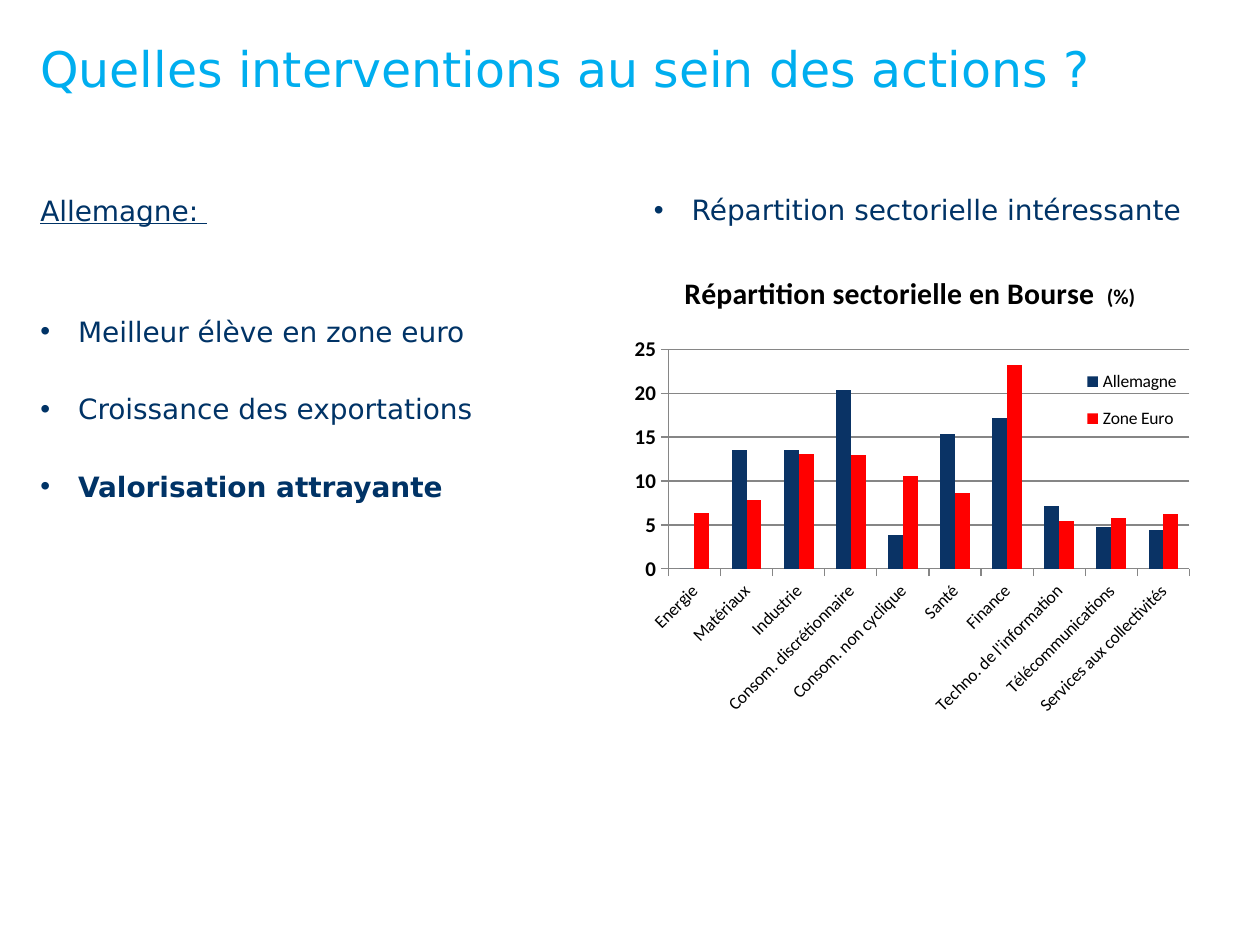
from dataclasses import dataclass

from lxml import etree
from pptx import Presentation
from pptx.chart.data import CategoryChartData
from pptx.dml.color import RGBColor
from pptx.enum.chart import XL_CHART_TYPE, XL_LEGEND_POSITION, XL_TICK_MARK
from pptx.oxml.ns import qn
from pptx.util import Inches, Pt

COLUMNS = XL_CHART_TYPE.COLUMN_CLUSTERED
LEGEND_RIGHT = XL_LEGEND_POSITION.RIGHT
TICK_OUTSIDE = XL_TICK_MARK.OUTSIDE

NAVY = RGBColor(0x00, 0x33, 0x66)
CYAN = RGBColor(0x00, 0xAE, 0xEF)
BLACK = RGBColor(0x00, 0x00, 0x00)
GRAY = RGBColor(0x86, 0x86, 0x86)
GERMANY_BLUE = RGBColor(0x0A, 0x33, 0x65)
EURO_RED = RGBColor(0xFF, 0x00, 0x00)

TEXT_FONT = "DejaVu Sans"
CHART_FONT = "Calibri"
BULLET_INDENT = Inches(0.3)


@dataclass
class Line:
    text: str
    size: float = 16
    color: RGBColor = NAVY
    spacing: float = 0.9
    before: float = 3
    after: float = 3
    bullet: bool = False
    bold: bool = False
    underline: bool = False


@dataclass
class TextBlock:
    left: float
    top: float
    width: float
    height: float
    lines: list[Line]


@dataclass
class Series:
    name: str
    values: list[float]
    color: RGBColor


TEXT_BLOCKS = [
    TextBlock(0.32, 0.38, 9.37, 1.01, [
        Line("Quelles interventions au sein des actions ?", 28, CYAN, 0.85, 0, 0),
    ]),
    TextBlock(0.32, 1.57, 4.56, 4.78, [
        Line("Allemagne: ", before=0, after=27, underline=True),
        Line("Meilleur élève en zone euro", spacing=2, bullet=True),
        Line("Croissance des exportations", spacing=2, bullet=True),
        Line("Valorisation attrayante", spacing=2, bullet=True, bold=True),
    ]),
    TextBlock(5.19, 1.56, 4.5, 0.4, [
        Line("Répartition sectorielle intéressante", before=0, bullet=True),
    ]),
]

SECTORS = [
    "Energie", "Matériaux", "Industrie", "Consom. discrétionnaire",
    "Consom. non cyclique", "Santé", "Finance", "Techno. de l'information",
    "Télécommunications", "Services aux collectivités",
]
SERIES = [
    Series("Allemagne", [0, 13.5, 13.5, 20.4, 3.9, 15.3, 17.2, 7.1, 4.7, 4.4],
           GERMANY_BLUE),
    Series("Zone Euro", [6.3, 7.8, 13.1, 13, 10.6, 8.6, 23.2, 5.4, 5.8, 6.2],
           EURO_RED),
]


def add_bullet(paragraph) -> None:
    properties = paragraph._p.get_or_add_pPr()
    properties.set("marL", str(BULLET_INDENT))
    properties.set("indent", str(-BULLET_INDENT))
    color = etree.SubElement(properties, qn("a:buClr"))
    etree.SubElement(color, qn("a:srgbClr"), val=str(NAVY))
    etree.SubElement(properties, qn("a:buFont"), typeface="Arial")
    etree.SubElement(properties, qn("a:buChar"), char="•")


def add_text_block(slide, block: TextBlock) -> None:
    shape = slide.shapes.add_textbox(Inches(block.left), Inches(block.top),
                                     Inches(block.width), Inches(block.height))
    frame = shape.text_frame
    frame.word_wrap = True
    frame.margin_left = frame.margin_right = Inches(0)
    frame.margin_top = frame.margin_bottom = Inches(0)
    for index, line in enumerate(block.lines):
        paragraph = frame.add_paragraph() if index else frame.paragraphs[0]
        if line.bullet:
            add_bullet(paragraph)
        paragraph.line_spacing = line.spacing
        paragraph.space_before = Pt(line.before)
        paragraph.space_after = Pt(line.after)
        run = paragraph.add_run()
        run.text = line.text
        font = run.font
        font.name, font.size = TEXT_FONT, Pt(line.size)
        font.bold, font.underline = line.bold, line.underline
        font.color.rgb = line.color


def place(element, inner: bool = False, **fractions: float) -> None:
    """Fix a chart part at fractions (x, y, w, h) of the chart area."""
    for old in element.findall(qn("c:layout")):
        element.remove(old)
    layout = etree.Element(qn("c:layout"))
    manual = etree.SubElement(layout, qn("c:manualLayout"))
    if inner:
        etree.SubElement(manual, qn("c:layoutTarget"), val="inner")
    for key in ("x", "y"):
        etree.SubElement(manual, qn(f"c:{key}Mode"), val="edge")
    for key, value in fractions.items():
        etree.SubElement(manual, qn(f"c:{key}"), val=str(value))
    overlay = element.find(qn("c:overlay"))
    if overlay is None:
        element.insert(0, layout)
    else:
        overlay.addprevious(layout)


def add_chart_title(chart) -> None:
    title = chart.chart_title
    paragraph = title.text_frame.paragraphs[0]
    for text, size in (("Répartition sectorielle en Bourse ", 17), (" (%)", 12)):
        run = paragraph.add_run()
        run.text = text
        run.font.name, run.font.size, run.font.bold = CHART_FONT, Pt(size), True
        run.font.color.rgb = BLACK
    title.include_in_layout = False
    place(title._element, x=0.1, y=0.02)


def style_axes(chart) -> None:
    for axis in (chart.category_axis, chart.value_axis):
        axis.major_tick_mark = TICK_OUTSIDE
        axis.format.line.color.rgb = GRAY
        axis.tick_labels.font.size = Pt(10)
    labels = chart.category_axis._element.find(qn("c:txPr"))
    labels.find(qn("a:bodyPr")).set("rot", "-2700000")

    value_axis = chart.value_axis
    value_axis.minimum_scale, value_axis.maximum_scale = 0, 25
    value_axis.major_unit = 5
    value_axis.major_gridlines.format.line.color.rgb = GRAY
    value_axis.tick_labels.font.size = Pt(12)
    value_axis.tick_labels.font.bold = True
    value_axis.tick_labels.number_format = "0"
    value_axis.tick_labels.number_format_is_linked = False


def add_sector_chart(slide) -> None:
    data = CategoryChartData()
    data.categories = SECTORS
    for series in SERIES:
        data.add_series(series.name, series.values)
    chart = slide.shapes.add_chart(COLUMNS, Inches(4.92), Inches(2.05),
                                   Inches(4.81), Inches(4.25), data).chart
    chart.font.name, chart.font.size = CHART_FONT, Pt(10)
    chart.font.color.rgb = BLACK
    add_chart_title(chart)
    style_axes(chart)

    plot = chart.plots[0]
    plot.gap_width, plot.overlap = 150, 0
    plot.vary_by_categories = False
    for drawn, series in zip(plot.series, SERIES):
        drawn.format.fill.solid()
        drawn.format.fill.fore_color.rgb = series.color
    plot_area = chart._chartSpace.chart.plotArea
    place(plot_area, inner=True, x=0.08, y=0.17, w=0.86, h=0.41)

    chart.has_legend = True
    chart.legend.position = LEGEND_RIGHT
    chart.legend.include_in_layout = False
    chart.legend.font.size = Pt(10)
    place(chart.legend._element, x=0.74, y=0.18, w=0.21, h=0.17)


def main() -> None:
    presentation = Presentation()
    presentation.slide_width, presentation.slide_height = Inches(10), Inches(7.5)
    slide = presentation.slides.add_slide(presentation.slide_layouts[6])
    for block in TEXT_BLOCKS:
        add_text_block(slide, block)
    add_sector_chart(slide)
    presentation.save("out.pptx")


if __name__ == "__main__":
    main()
